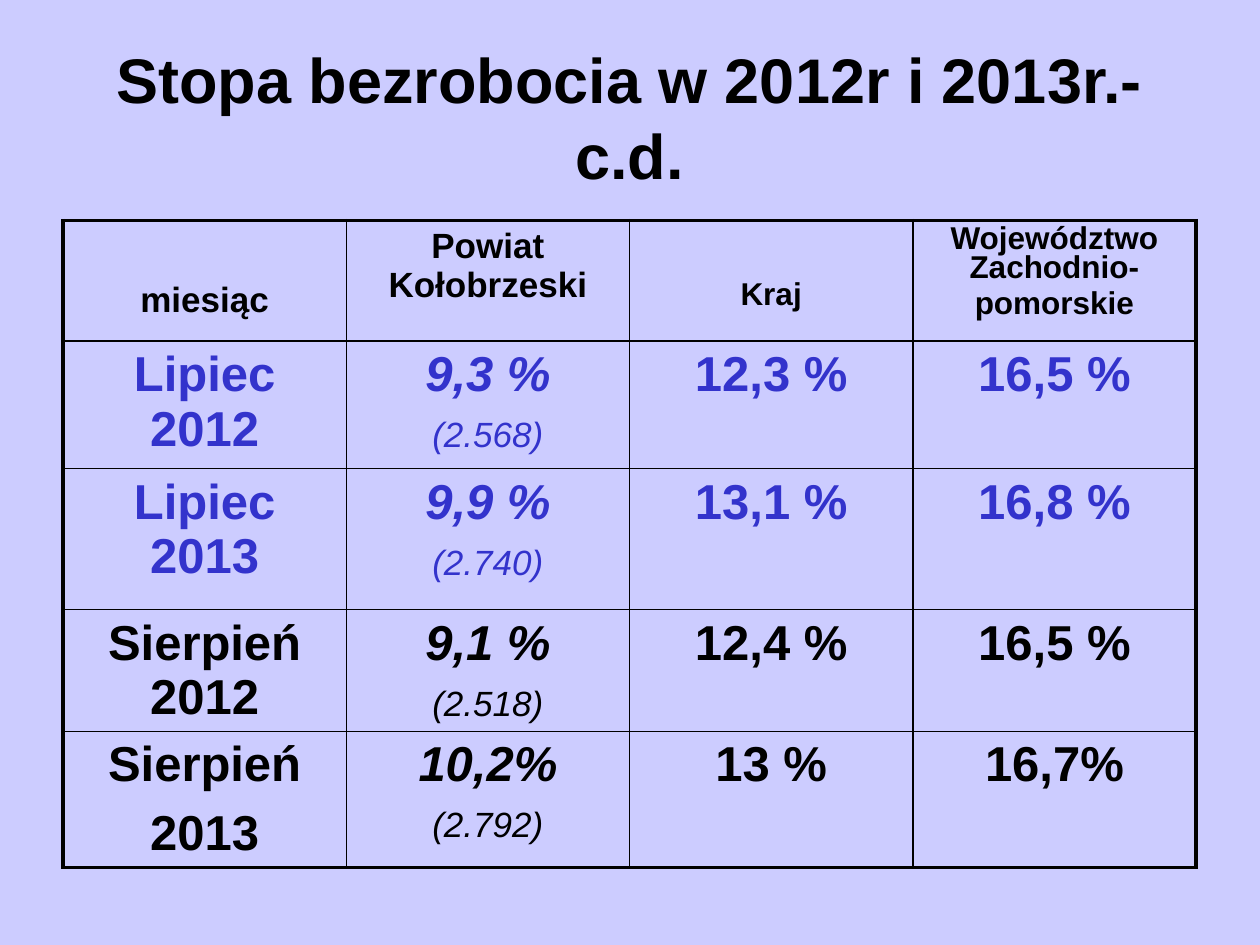
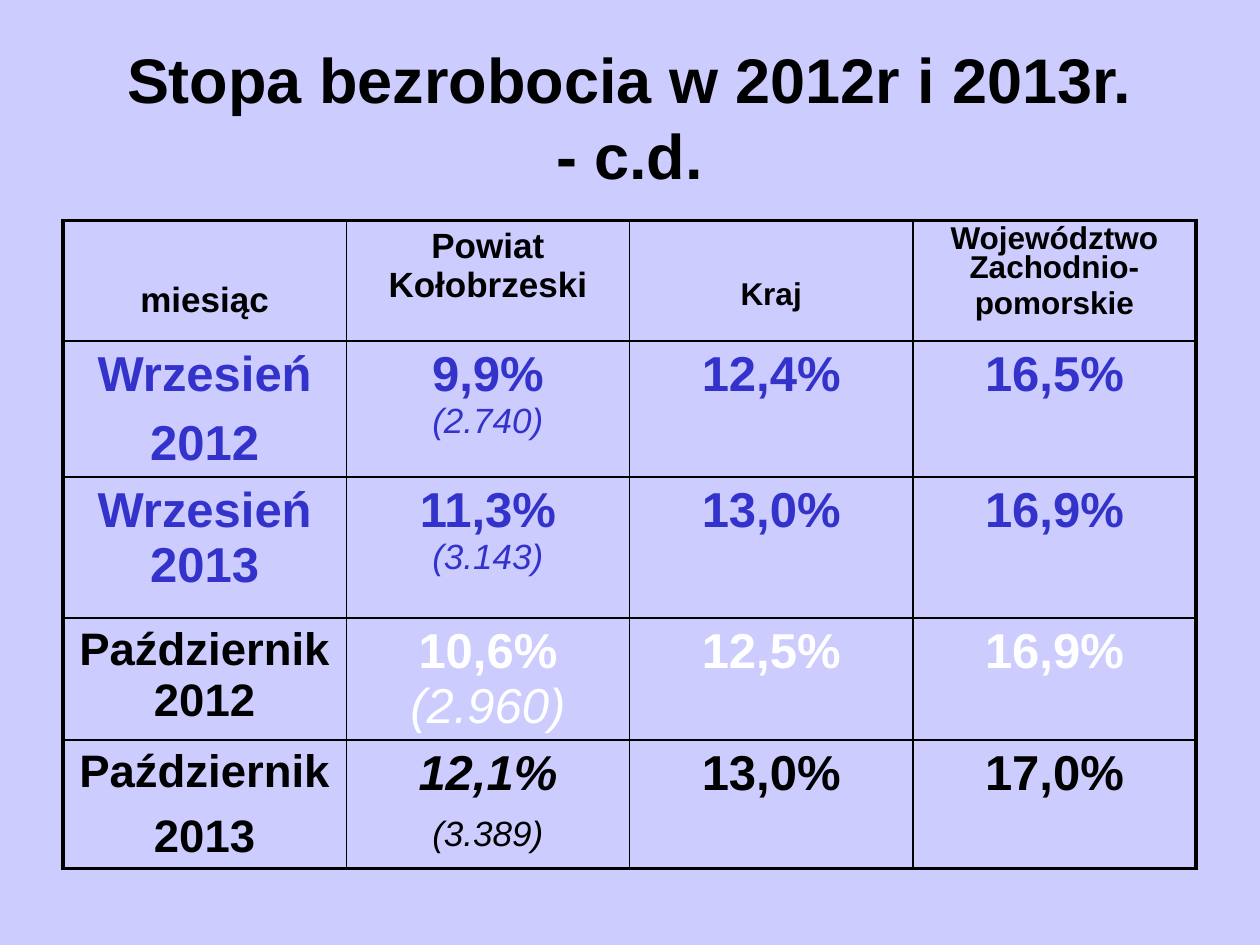
from lxml import etree
from pptx import Presentation
from pptx.dml.color import RGBColor
from pptx.enum.text import MSO_ANCHOR, MSO_AUTO_SIZE, PP_ALIGN
from pptx.oxml.ns import qn
from pptx.util import Pt

BACKGROUND, BLACK, BLUE, WHITE = "CCCCFF", "000000", "3333CC", "FFFFFF"
FONT = "Arial"
TITLE_BOX = (36, 10, 647.5, 113)
TABLE_LEFT, TABLE_TOP, TABLE_WIDTH = 36, 126, 647.5
ROW_HEIGHTS = (69, 72.7, 80.6, 67, 67)
OUTER_LINE, INNER_LINE = 2.25, 1
VALUE_SIZE, NOTE_SIZE = 28, 20

# Heading paragraphs, size, cell top margin, paragraph format
HEADINGS = [
    (["miesiąc"], 20, 34.6, {"space_before": Pt(8)}),
    (["Powiat Kołobrzeski"], 20, 3.6, {"space_before": Pt(8)}),
    (["Kraj"], 18, 32.3, {"space_before": Pt(8)}),
    (["Województwo Zachodnio-", "pomorskie"], 18, 3.6,
     {"space_before": Pt(4.5), "line_spacing": 0.81}),
]

# Row: month paragraphs, rate and count in the county, country, voivodeship, format
SLIDES = [
    (["Stopa bezrobocia w 2012r i 2013r.- c.d."], [
        (["Lipiec 2012"], "9,3 %", "(2.568)", "12,3 %", "16,5 %", {"color": BLUE}),
        (["Lipiec 2013"], "9,9 %", "(2.740)", "13,1 %", "16,8 %", {"color": BLUE}),
        (["Sierpień 2012"], "9,1 %", "(2.518)", "12,4 %", "16,5 %", {}),
        (["Sierpień", "2013"], "10,2%", "(2.792)", "13 %", "16,7%", {}),
    ]),
    (["Stopa bezrobocia w 2012r i 2013r.", "- c.d."], [
        (["Wrzesień", "2012"], "9,9%", "(2.740)", "12,4%", "16,5%",
         {"color": BLUE, "italic": False, "gap": 0}),
        (["Wrzesień 2013"], "11,3%", "(3.143)", "13,0%", "16,9%",
         {"color": BLUE, "italic": False, "gap": 0}),
        (["Październik 2012"], "10,6%", "(2.960)", "12,5%", "16,9%",
         {"value_color": WHITE, "month_size": 26, "note_size": 28,
          "italic": False, "gap": 0}),
        (["Październik", "2013"], "12,1%", "(3.389)", "13,0%", "17,0%",
         {"month_size": 26}),
    ]),
]


def rgb(color):
    return RGBColor.from_string(color)


def set_attributes(target, values):
    for name, value in values.items():
        setattr(target, name, value)


def format_font(font, size, color=BLACK, bold=True, italic=False):
    set_attributes(font, {"name": FONT, "size": Pt(size), "bold": bold, "italic": italic})
    font.color.rgb = rgb(color)


def write_cell(cell, lines, paragraph_format):
    """Write (text, font format) pairs, one paragraph each."""
    frame = cell.text_frame
    for index, (text, font_format) in enumerate(lines):
        paragraph = frame.add_paragraph() if index else frame.paragraphs[0]
        set_attributes(paragraph, {"alignment": PP_ALIGN.CENTER, **paragraph_format})
        run = paragraph.add_run()
        run.text = text
        format_font(run.font, **font_format)


def draw_borders(cell, widths):
    """Add left, right, top and bottom lines, which precede the cell's fill."""
    properties = cell._tc.get_or_add_tcPr()
    for position, (side, width) in enumerate(widths.items()):
        line = etree.Element(qn(f"a:ln{side}"), w=str(Pt(width)))
        fill = etree.SubElement(line, qn("a:solidFill"))
        etree.SubElement(fill, qn("a:srgbClr"), val=BLACK)
        properties.insert(position, line)


def add_title(slide, lines):
    title = slide.shapes.title
    set_attributes(title, dict(zip(("left", "top", "width", "height"), map(Pt, TITLE_BOX))))
    set_attributes(title.text_frame, {
        "word_wrap": True, "auto_size": MSO_AUTO_SIZE.NONE,
        "vertical_anchor": MSO_ANCHOR.MIDDLE,
    })
    paragraph = title.text_frame.paragraphs[0]
    paragraph.alignment = PP_ALIGN.CENTER
    for index, text in enumerate(lines):
        if index:
            paragraph.add_line_break()
        run = paragraph.add_run()
        run.text = text
        format_font(run.font, 36)


def write_rates(cells, months, rate, count, country, voivodeship, style):
    color = style.get("color", BLACK)
    value_font = {"size": VALUE_SIZE, "color": style.get("value_color", color)}
    month_font = {"size": style.get("month_size", VALUE_SIZE), "color": color}
    rate_font = {**value_font, "italic": style.get("italic", True)}
    count_font = {**value_font, "size": style.get("note_size", NOTE_SIZE),
                  "bold": False, "italic": True}
    columns = [
        [(month, month_font) for month in months],
        [(rate, rate_font), (count, count_font)],
        [(country, value_font)],
        [(voivodeship, value_font)],
    ]
    gaps = [8] + [style.get("gap", 8)] * 3
    for cell, lines, gap in zip(cells, columns, gaps):
        write_cell(cell, lines, {"space_before": Pt(gap)})


def add_rate_table(slide, rates):
    row_count, column_count = len(rates) + 1, len(HEADINGS)
    table = slide.shapes.add_table(
        row_count, column_count, Pt(TABLE_LEFT), Pt(TABLE_TOP),
        Pt(TABLE_WIDTH), Pt(sum(ROW_HEIGHTS))).table
    set_attributes(table, {"first_row": False, "horz_banding": False})
    for column in table.columns:
        column.width = Pt(TABLE_WIDTH / column_count)
    for row, height in zip(table.rows, ROW_HEIGHTS):
        row.height = Pt(height)

    for cell, (lines, size, margin, paragraph_format) in zip(table.rows[0].cells, HEADINGS):
        cell.margin_top = Pt(margin)
        write_cell(cell, [(text, {"size": size}) for text in lines], paragraph_format)
    for row_index, rate_row in enumerate(rates, start=1):
        write_rates(table.rows[row_index].cells, *rate_row)

    for row_index in range(row_count):
        for column_index in range(column_count):
            cell = table.cell(row_index, column_index)
            cell.fill.background()
            outer_sides = {
                "L": column_index == 0, "R": column_index == column_count - 1,
                "T": row_index == 0, "B": row_index == row_count - 1,
            }
            draw_borders(cell, {side: OUTER_LINE if outer else INNER_LINE
                                for side, outer in outer_sides.items()})


def main():
    presentation = Presentation()
    set_attributes(presentation, {"slide_width": Pt(720), "slide_height": Pt(540)})
    background = presentation.slide_master.background.fill
    background.solid()
    background.fore_color.rgb = rgb(BACKGROUND)
    title_only = presentation.slide_layouts.get_by_name("Title Only")
    for title_lines, rates in SLIDES:
        slide = presentation.slides.add_slide(title_only)
        add_title(slide, title_lines)
        add_rate_table(slide, rates)
    presentation.save("out.pptx")


if __name__ == "__main__":
    main()
